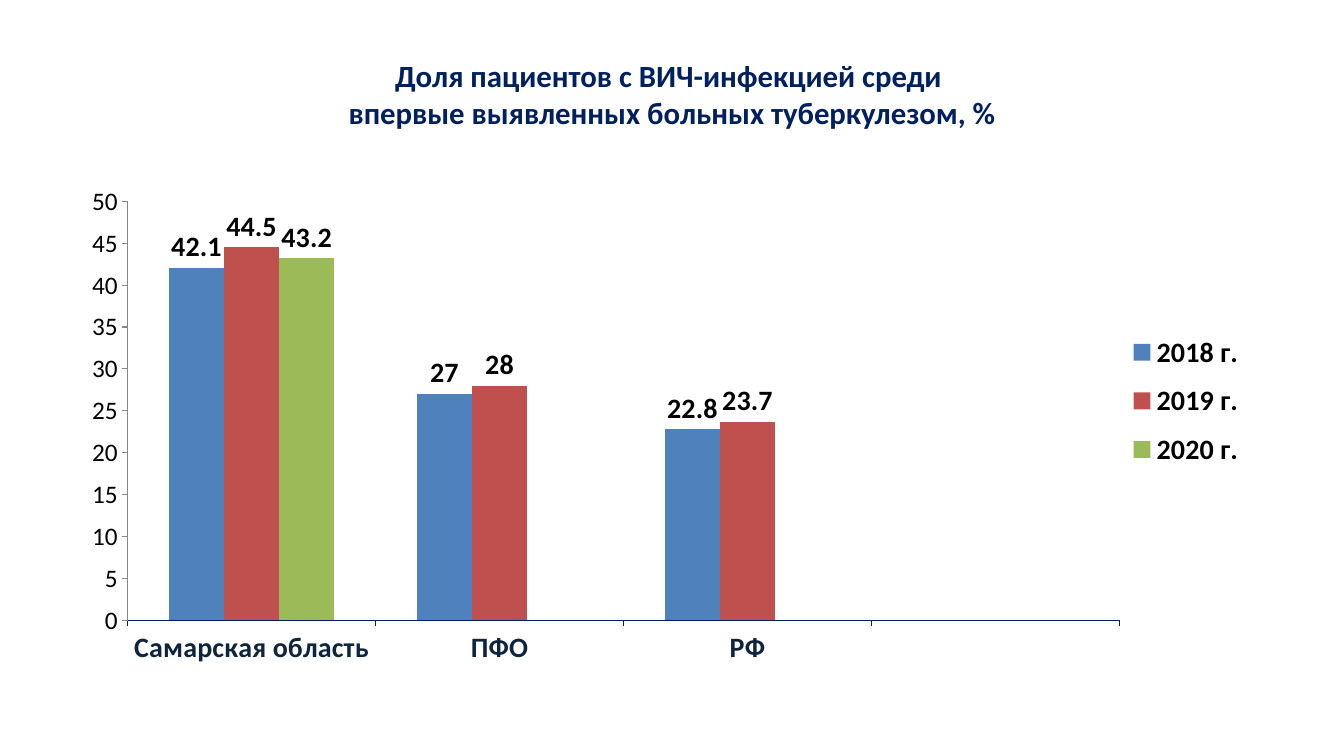
from dataclasses import dataclass

from lxml import etree
from pptx import Presentation
from pptx.chart.data import CategoryChartData
from pptx.dml.color import RGBColor
from pptx.enum.chart import XL_CHART_TYPE, XL_LABEL_POSITION, XL_LEGEND_POSITION, XL_TICK_MARK
from pptx.enum.text import MSO_ANCHOR, PP_ALIGN
from pptx.util import Pt

COLUMN_CLUSTERED = XL_CHART_TYPE.COLUMN_CLUSTERED
OUTSIDE_END = XL_LABEL_POSITION.OUTSIDE_END
LEGEND_RIGHT = XL_LEGEND_POSITION.RIGHT
TICK_OUTSIDE = XL_TICK_MARK.OUTSIDE
CENTER = PP_ALIGN.CENTER
MIDDLE = MSO_ANCHOR.MIDDLE
CHART_NAMESPACE = "http://schemas.openxmlformats.org/drawingml/2006/chart"


@dataclass(frozen=True)
class Theme:
    font: str = "Calibri"
    navy: RGBColor = RGBColor.from_string("002060")
    category: RGBColor = RGBColor.from_string("0F243E")
    text: RGBColor = RGBColor.from_string("000000")
    axis: RGBColor = RGBColor.from_string("868686")
    title_size: Pt = Pt(22)
    label_size: Pt = Pt(20)
    scale_size: Pt = Pt(18)


theme = Theme()


def set_font(font, size, color, bold):
    font.name = theme.font
    font.size = size
    font.color.rgb = color
    font.bold = bold


def add_layout(parent, index, target, x, y, width, height):
    layout = etree.Element(f"{{{CHART_NAMESPACE}}}layout")
    manual = etree.SubElement(layout, f"{{{CHART_NAMESPACE}}}manualLayout")
    settings = [("xMode", "edge"), ("yMode", "edge"), ("x", x), ("y", y), ("w", width), ("h", height)]
    if target:
        settings.insert(0, ("layoutTarget", target))
    for name, value in settings:
        etree.SubElement(manual, f"{{{CHART_NAMESPACE}}}{name}").set("val", str(value))
    for existing in parent.findall(f"{{{CHART_NAMESPACE}}}layout"):
        parent.remove(existing)
    parent.insert(index, layout)


presentation = Presentation()
presentation.slide_width = Pt(960)
presentation.slide_height = Pt(540)
slide = presentation.slides.add_slide(presentation.slide_layouts[5])

title = slide.shapes.title
title.left, title.top, title.width, title.height = Pt(48), Pt(21.6), Pt(864), Pt(90)
title.text_frame.text = "Доля пациентов с ВИЧ-инфекцией среди \vвпервые выявленных больных туберкулезом, %"
title.text_frame.vertical_anchor = MIDDLE
paragraph = title.text_frame.paragraphs[0]
paragraph.alignment = CENTER
set_font(paragraph.font, theme.title_size, theme.navy, True)

years = [
    ("2018 г.", (42.1, 27, 22.8, None), "4F81BD"),
    ("2019 г.", (44.5, 28, 23.7, None), "C0504D"),
    ("2020 г.", (43.2, None, None, None), "9BBB59"),
]
chart_data = CategoryChartData()
chart_data.categories = ["Самарская область", "ПФО", "РФ", ""]
for name, values, color in years:
    chart_data.add_series(name, values)

chart = slide.shapes.add_chart(
    COLUMN_CLUSTERED, Pt(48), Pt(126), Pt(864), Pt(356.4), chart_data
).chart
chart.has_title = False
set_font(chart.font, theme.scale_size, theme.text, False)

plot = chart.plots[0]
plot.gap_width = 150
plot.overlap = 0
plot.vary_by_categories = False
for series, (name, values, color) in zip(plot.series, years):
    series.format.fill.solid()
    series.format.fill.fore_color.rgb = RGBColor.from_string(color)
    labels = series.data_labels
    labels.show_value = True
    labels.position = OUTSIDE_END
    set_font(labels.font, theme.label_size, theme.text, True)

category_axis = chart.category_axis
category_axis.major_tick_mark = TICK_OUTSIDE
category_axis.format.line.color.rgb = theme.navy
category_axis.format.line.width = Pt(0.75)
set_font(category_axis.tick_labels.font, theme.label_size, theme.category, True)

value_axis = chart.value_axis
value_axis.minimum_scale = 0
value_axis.maximum_scale = 50
value_axis.major_unit = 5
value_axis.has_major_gridlines = False
value_axis.major_tick_mark = TICK_OUTSIDE
value_axis.format.line.color.rgb = theme.axis
value_axis.format.line.width = Pt(0.75)
set_font(value_axis.tick_labels.font, theme.scale_size, theme.text, False)

chart.has_legend = True
legend = chart.legend
legend.position = LEGEND_RIGHT
legend.include_in_layout = False
set_font(legend.font, theme.label_size, theme.text, True)

plot_area = chart.element.find(f".//{{{CHART_NAMESPACE}}}plotArea")
legend_area = chart.element.find(f".//{{{CHART_NAMESPACE}}}legend")
add_layout(plot_area, 0, "inner", 0.05, 0.05, 0.82, 0.84)
add_layout(legend_area, 1, None, 0.86, 0.29, 0.13, 0.32)

presentation.save("out.pptx")
